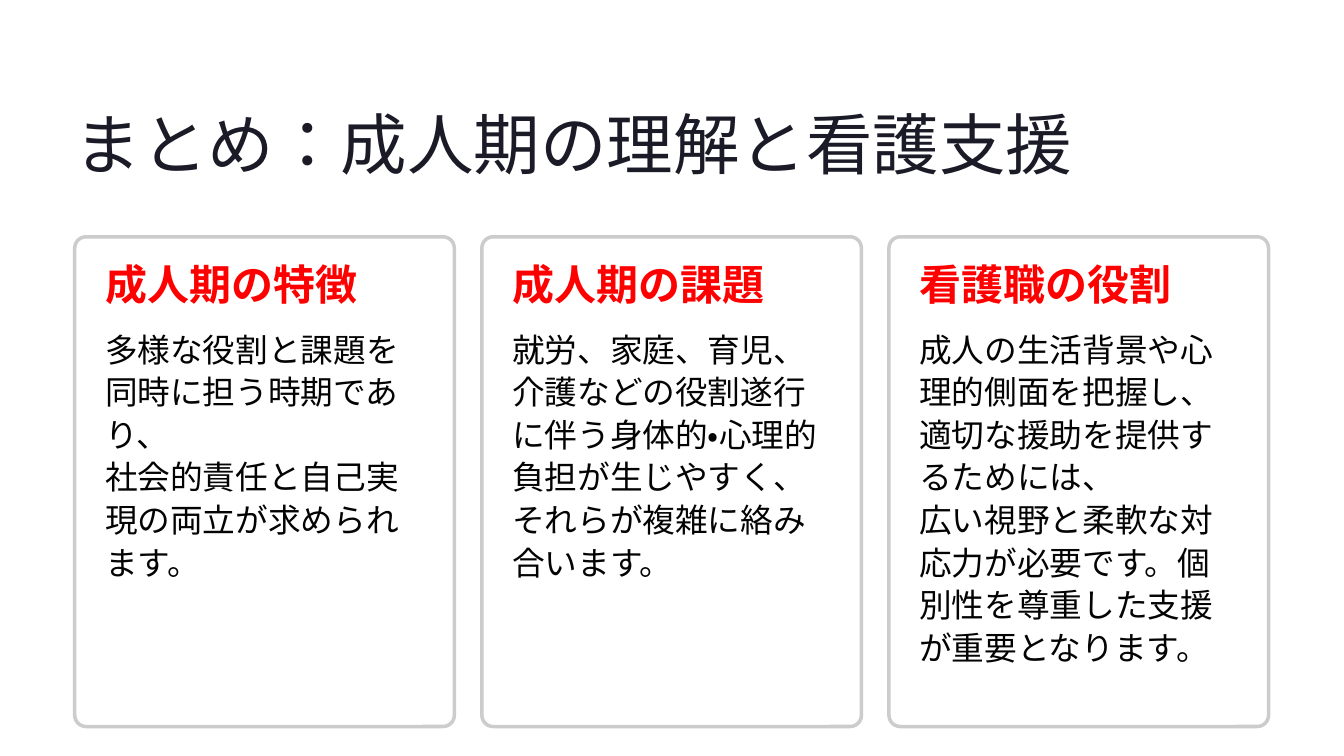
from lxml import etree
from pptx import Presentation
from pptx.dml.color import RGBColor
from pptx.enum.lang import MSO_LANGUAGE_ID as LANG
from pptx.enum.shapes import MSO_SHAPE as SHAPE
from pptx.enum.text import MSO_ANCHOR, MSO_AUTO_SIZE, PP_ALIGN
from pptx.oxml.ns import qn
from pptx.util import Cm, Pt

COLORS = {"title": "1B1B27", "heading": "FF0000", "body": "030303",
          "card": "FFFFFF", "border": "CCCCCC"}
CARDS = [
    ("成人期の特徴", ["多様な役割と課題を同時に担う時期であり、",
                "社会的責任と自己実現の両立が求められます。"]),
    ("成人期の課題", ["就労、家庭、育児、介護などの役割遂行に伴う身体的・心理的負担が生じやすく、",
                "それらが複雑に絡み合います。"]),
    ("看護職の役割", ["成人の生活背景や心理的側面を把握し、適切な援助を提供するためには、",
                "広い視野と柔軟な対応力が必要です。個別性を尊重した支援が重要となります。"]),
]
LEFT, TOP, WIDTH, HEIGHT, PITCH = 2.26, 7.16, 11.48, 14.81, 12.31
INSET = 0.92


def color(name):
    return RGBColor.from_string(COLORS[name])


def write(shape, lines, font, size, spacing, name, bold=False, wrap=False):
    tf = shape.text_frame
    tf.margin_left = tf.margin_right = tf.margin_top = tf.margin_bottom = 0
    tf.word_wrap = wrap
    tf.auto_size = MSO_AUTO_SIZE.NONE
    tf.vertical_anchor = MSO_ANCHOR.TOP
    for i, line in enumerate(lines):
        p = tf.paragraphs[0] if i == 0 else tf.add_paragraph()
        p.alignment = PP_ALIGN.LEFT
        p.line_spacing = Pt(spacing)
        r = p.add_run()
        r.text = line
        r.font.name = font
        r.font.size = Pt(size)
        r.font.bold = bold
        r.font.color.rgb = color(name)
        r.font.language_id = LANG.JAPANESE


prs = Presentation()
prs.slide_width, prs.slide_height = Cm(40.64), Cm(22.86)
s = prs.slides.add_slide(prs.slide_layouts[5])

title = s.shapes.title
title.left, title.top, title.width, title.height = Cm(LEFT), Cm(3.02), Cm(30.43), Cm(2.54)
write(title, ["まとめ：成人期の理解と看護支援"], "Inter", 57, 71.5, "title")

for i, (heading, lines) in enumerate(CARDS):
    x = LEFT + i * PITCH
    card = s.shapes.add_shape(SHAPE.ROUNDED_RECTANGLE, Cm(x), Cm(TOP), Cm(WIDTH), Cm(HEIGHT))
    card.adjustments[0] = 0.03
    card.shadow.inherit = False
    card.fill.solid()
    card.fill.fore_color.rgb = color("card")
    rgb = card.fill._xPr.find(qn("a:solidFill")).find(qn("a:srgbClr"))
    etree.SubElement(rgb, qn("a:alpha")).set("val", "95000")
    card.line.color.rgb = color("border")
    card.line.width = Pt(3)

    text_x, text_w = Cm(x + INSET), Cm(WIDTH - 2 * INSET)
    sp = s.shapes.add_textbox(text_x, Cm(TOP + INSET), text_w, Cm(1.27))
    write(sp, [heading], "Inter", 36, 35.5, "heading", bold=True)
    sp = s.shapes.add_textbox(text_x, Cm(9.86), text_w, Cm(9.1))
    write(sp, lines, "Roboto", 28, 36.5, "body", wrap=True)

prs.save("out.pptx")
